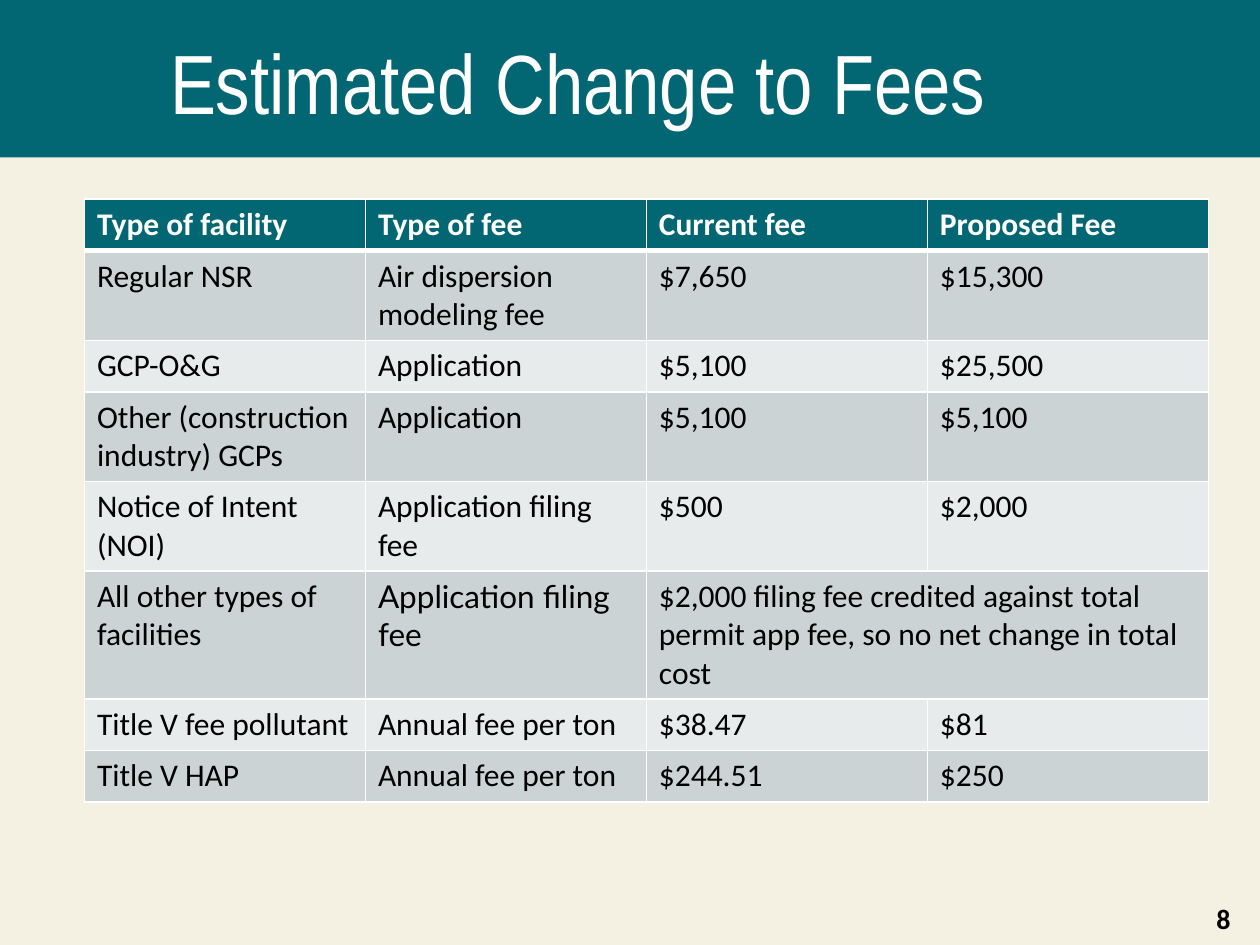
from dataclasses import dataclass

from pptx import Presentation
from pptx import util as u
from pptx.dml.color import RGBColor
from pptx.enum import shapes, text
from pptx.oxml.xmlchemy import OxmlElement


@dataclass(frozen=True)
class Theme:
    """Colours, fonts and type sizes of the slide."""
    cream: str = "F4F1E2"
    teal: str = "026773"
    dark: str = "CCD3D5"
    light: str = "E7EBEB"
    white: str = "FFFFFF"
    black: str = "000000"
    head: str = "Arial Narrow"
    body: str = "Calibri"
    alt: str = "Lato"
    big: int = 48
    mid: int = 18
    small: int = 16


THEME = Theme()
FEES = [
    ["Type of facility", "Type of fee", "Current fee", "Proposed Fee"],
    ["Regular NSR", "Air dispersion modeling fee", "$7,650", "$15,300"],
    ["GCP-O&G", "Application", "$5,100", "$25,500"],
    ["Other (construction industry) GCPs", "Application", "$5,100", "$5,100"],
    ["Notice of Intent (NOI)", "Application filing fee", "$500", "$2,000"],
    ["All other types of facilities", "Application filing fee",
     "$2,000 filing fee credited against total permit app fee, "
     "so no net change in total cost"],
    ["Title V fee pollutant", "Annual fee per ton", "$38.47", "$81"],
    ["Title V HAP", "Annual fee per ton", "$244.51", "$250"],
]
OTHER = 5


def paint(fill, tint):
    """Give a fill one solid colour."""
    fill.solid()
    fill.fore_color.rgb = RGBColor.from_string(tint)


def style(frame, face, size, tint, bold=False):
    """Format every run in a text frame."""
    for para in frame.paragraphs:
        for run in para.runs:
            font = run.font
            font.name, font.size, font.bold = face, u.Pt(size), bold
            font.color.rgb = RGBColor.from_string(tint)


def edge(cell, side, width):
    """Draw one white border of a table cell."""
    line = OxmlElement(f"a:ln{side}")
    line.set("w", str(u.Pt(width)))
    fill = OxmlElement("a:solidFill")
    tint = OxmlElement("a:srgbClr")
    tint.set("val", THEME.white)
    fill.append(tint)
    line.append(fill)
    cell._tc.get_or_add_tcPr().append(line)


def add_band(slide):
    """Add the teal band behind the title."""
    band = slide.shapes.add_shape(
        shapes.MSO_SHAPE.RECTANGLE, 0, 0, u.Inches(10), u.Inches(1.25))
    band.shadow.inherit = False
    paint(band.fill, THEME.teal)
    band.line.fill.background()
    tree = slide.shapes._spTree
    tree.remove(band._element)
    tree.insert(2, band._element)


def set_title(slide, words):
    """Place and format the title."""
    title = slide.shapes.title
    title.left, title.top = u.Inches(1.25), u.Inches(0.17)
    title.width, title.height = u.Inches(8.58), u.Inches(0.95)
    frame = title.text_frame
    frame.text = words
    frame.auto_size = text.MSO_AUTO_SIZE.NONE
    frame.vertical_anchor = text.MSO_ANCHOR.MIDDLE
    frame.paragraphs[0].alignment = text.PP_ALIGN.LEFT
    style(frame, THEME.head, THEME.big, THEME.white)


def dress(cell, row, col):
    """Set the borders, fill and font of a cell by its place."""
    for side in "LRTB":
        thick = (row, side) in ((0, "B"), (1, "T"))
        edge(cell, side, 3 if thick else 1)
    first = row == 0
    band = THEME.dark if row % 2 else THEME.light
    paint(cell.fill, THEME.teal if first else band)
    face = THEME.alt if (row, col) == (OTHER, 1) else THEME.body
    tint = THEME.white if first else THEME.black
    style(cell.text_frame, face, THEME.mid, tint, first)


def add_fees(slide):
    """Add the table of fees."""
    rows, cols = len(FEES), len(FEES[0])
    high = u.Inches(0.41)
    grid = slide.shapes.add_table(
        rows, cols, u.Inches(0.67), u.Inches(1.58),
        u.Inches(8.92), high * rows).table
    for row, words in enumerate(FEES):
        grid.rows[row].height = high
        for col in range(cols):
            cell = grid.cell(row, col)
            if col < len(words):
                cell.text_frame.text = words[col]
            dress(cell, row, col)
    grid.cell(OTHER, 2).merge(grid.cell(OTHER, 3))


def add_page(slide, words):
    """Add the page number."""
    box = slide.shapes.add_textbox(
        u.Inches(9.42), u.Inches(7.15), u.Inches(0.58), u.Inches(0.27))
    frame = box.text_frame
    frame.text = words
    frame.word_wrap = True
    frame.vertical_anchor = text.MSO_ANCHOR.MIDDLE
    frame.paragraphs[0].alignment = text.PP_ALIGN.CENTER
    style(frame, THEME.body, THEME.small, THEME.black, True)


def main():
    """Build and save the slide."""
    deck = Presentation()
    deck.slide_width, deck.slide_height = u.Inches(10), u.Inches(7.5)
    slide = deck.slides.add_slide(deck.slide_layouts[5])
    paint(slide.background.fill, THEME.cream)
    add_band(slide)
    set_title(slide, "Estimated Change to Fees")
    add_fees(slide)
    add_page(slide, "8")
    deck.save("out.pptx")


if __name__ == "__main__":
    main()
